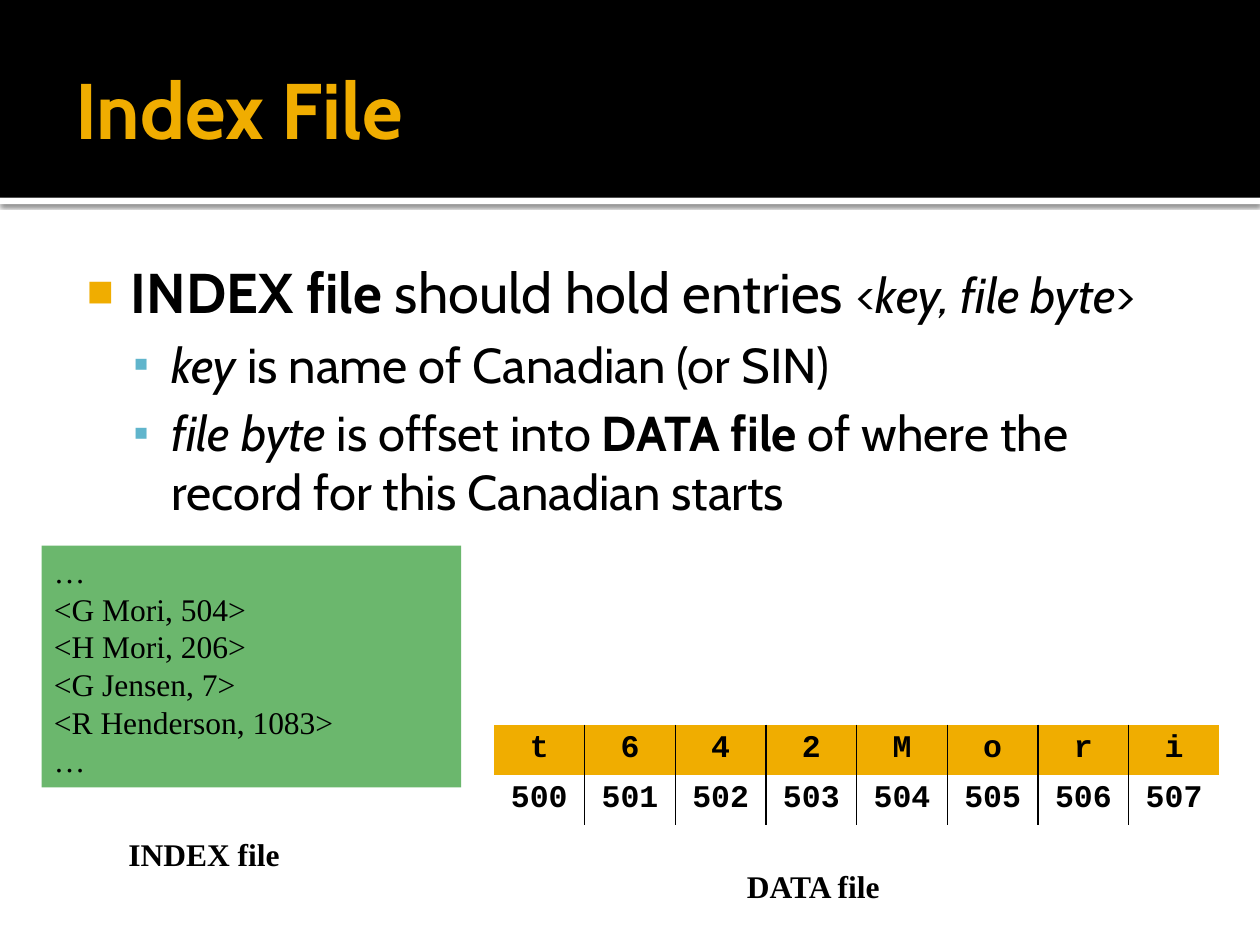
from typing import NamedTuple

from lxml.etree import SubElement as Sub
from pptx import Presentation
from pptx.dml.color import RGBColor
from pptx.enum.shapes import MSO_SHAPE as Kind
from pptx.enum.text import MSO_ANCHOR as Anchor, PP_ALIGN as Align
from pptx.oxml.ns import qn
from pptx.util import Inches, Pt

BLACK, WHITE, GOLD = "000000", "FFFFFF", "F0AD00"
GREEN, BLUE = "6BB76D", "60B5CC"
SANS, SERIF, MONO = "Cabin", "Times New Roman", "Courier New"


class Box(NamedTuple):
    left: float
    top: float
    width: float
    height: float


class Run(NamedTuple):
    text: str
    size: float = 18
    font: str = SERIF
    color: str = BLACK
    bold: bool = False
    slant: bool = False


class Bullet(NamedTuple):
    mark: str
    color: str
    scale: int
    left: float
    hang: float
    level: int
    space: float


class Item(NamedTuple):
    bullet: Bullet
    runs: list[Run]


class Label(NamedTuple):
    text: str
    left: float
    top: float


def paint(color: str) -> RGBColor:
    return RGBColor.from_string(color)


def place(box: Box) -> list[int]:
    return [Inches(side) for side in box]


def add_run(para, part: Run) -> None:
    run = para.add_run()
    run.text = part.text
    font = run.font
    font.name, font.size = part.font, Pt(part.size)
    font.bold, font.italic = part.bold, part.slant
    font.color.rgb = paint(part.color)


def add_rect(slide, box: Box, color: str):
    rect = slide.shapes.add_shape(Kind.RECTANGLE, *place(box))
    rect.shadow.inherit = False
    rect.fill.solid()
    rect.fill.fore_color.rgb = paint(color)
    rect.line.fill.background()
    return rect


def add_shade(shape) -> None:
    effects = shape._element.spPr.find(qn("a:effectLst"))
    shade = Sub(effects, qn("a:outerShdw"), blurRad=str(Pt(2.5)),
                dist=str(Pt(0.8)), dir="5400000", rotWithShape="0")
    tone = Sub(shade, qn("a:srgbClr"), val=BLACK)
    Sub(tone, qn("a:alpha"), val="60000")


def add_text(slide, box: Box, insets: Box = Box(0.1, 0.05, 0.1, 0.05)):
    frame = slide.shapes.add_textbox(*place(box)).text_frame
    frame.word_wrap = True
    (frame.margin_left, frame.margin_top,
     frame.margin_right, frame.margin_bottom) = place(insets)
    return frame


def next_para(frame, index: int):
    return frame.add_paragraph() if index else frame.paragraphs[0]


def add_bullet(para, bullet: Bullet) -> None:
    para.level = bullet.level
    props = para._p.get_or_add_pPr()
    props.set("marL", str(Inches(bullet.left)))
    props.set("indent", str(Inches(-bullet.hang)))
    if bullet.space:
        para.space_before = Pt(bullet.space)
    tone = Sub(props, qn("a:buClr"))
    Sub(tone, qn("a:srgbClr"), val=bullet.color)
    Sub(props, qn("a:buSzPct"), val=str(bullet.scale * 1000))
    Sub(props, qn("a:buFont"), typeface="Arial")
    Sub(props, qn("a:buChar"), char=bullet.mark)


def add_list(slide, box: Box, items: list[Item]) -> None:
    frame = add_text(slide, box, Box(0.06, 0.1, 0.1, 0.05))
    for index, item in enumerate(items):
        para = next_para(frame, index)
        add_bullet(para, item.bullet)
        for part in item.runs:
            add_run(para, part)


def add_edges(cell, left: bool, right: bool) -> None:
    props = cell._tc.get_or_add_tcPr()
    edges = {"a:lnL": left, "a:lnR": right, "a:lnT": False, "a:lnB": False}
    for index, (tag, shown) in enumerate(edges.items()):
        line = Sub(props, qn(tag), w=str(Pt(1)))
        props.insert(index, line)
        fill = Sub(line, qn("a:solidFill" if shown else "a:noFill"))
        if shown:
            Sub(fill, qn("a:srgbClr"), val=BLACK)


def add_bytes(slide, box: Box, rows: list[list[str]]) -> None:
    count = len(rows[0])
    table = slide.shapes.add_table(len(rows), count, *place(box)).table
    table.first_row = table.horz_banding = False
    for col in table.columns:
        col.width = Inches(box.width / count)
    for y, row in enumerate(rows):
        table.rows[y].height = Inches(box.height / len(rows))
        for x, text in enumerate(row):
            cell = table.cell(y, x)
            if y:
                cell.fill.background()
            else:
                cell.fill.solid()
                cell.fill.fore_color.rgb = paint(GOLD)
            add_edges(cell, x > 0, x < count - 1)
            para = cell.text_frame.paragraphs[0]
            para.alignment = Align.CENTER
            add_run(para, Run(text, font=MONO, bold=True))


def add_index(slide, box: Box, lines: list[str]) -> None:
    frame = add_rect(slide, box, GREEN).text_frame
    frame.word_wrap = True
    frame.vertical_anchor = Anchor.TOP
    for index, line in enumerate(lines):
        para = next_para(frame, index)
        para.alignment = Align.LEFT
        add_run(para, Run(line))


def main() -> None:
    """Build the index file slide and save it."""
    deck = Presentation()
    deck.slide_width, deck.slide_height = Inches(10), Inches(7.5)
    slide = deck.slides.add_slide(deck.slide_layouts[6])

    add_shade(add_rect(slide, Box(0, 1.57, 10, 0.05), WHITE))
    add_rect(slide, Box(0, 0, 10, 1.57), BLACK)
    title = add_text(slide, Box(0.5, 0.17, 9, 1.37), Box(0.1, 0.05, 0.05, 0.05))
    title.vertical_anchor = Anchor.MIDDLE
    add_run(title.paragraphs[0], Run("Index File", 45, SANS, GOLD, True))

    main_dot = Bullet("■", GOLD, 80, 0.48, 0.35, 0, 0)
    sub_dot = Bullet("▪", BLUE, 90, 0.8, 0.3, 1, 5.6)
    add_list(slide, Box(0.5, 1.94, 9, 5.06), [
        Item(main_dot, [
            Run("INDEX file", 32, SANS, bold=True),
            Run(" should hold entries ", 32, SANS),
            Run("<", 28, SANS),
            Run("key, file byte", 28, SANS, slant=True),
            Run(">", 28, SANS)]),
        Item(sub_dot, [
            Run("key", 28, SANS, slant=True),
            Run(" is name of Canadian (or SIN)", 28, SANS)]),
        Item(sub_dot, [
            Run("file byte", 28, SANS, slant=True),
            Run(" is offset into ", 28, SANS),
            Run("DATA file", 28, SANS, bold=True),
            Run(" of where the record for this Canadian starts", 28, SANS)])])

    data = "t642Mori"
    places = [str(500 + index) for index in range(len(data))]
    add_bytes(slide, Box(3.92, 5.75, 5.76, 0.76), [list(data), places])
    add_index(slide, Box(0.33, 4.33, 3.33, 1.92), [
        "…", "<G Mori, 504>", "<H Mori, 206>", "<G Jensen, 7>",
        "<R Henderson, 1083>", "…"])
    for label in (Label("INDEX file", 0.92, 6.58), Label("DATA file", 5.83, 6.83)):
        frame = add_text(slide, Box(label.left, label.top, 1.58, 0.4))
        add_run(frame.paragraphs[0], Run(label.text, bold=True))
    deck.save("out.pptx")


if __name__ == "__main__":
    main()
